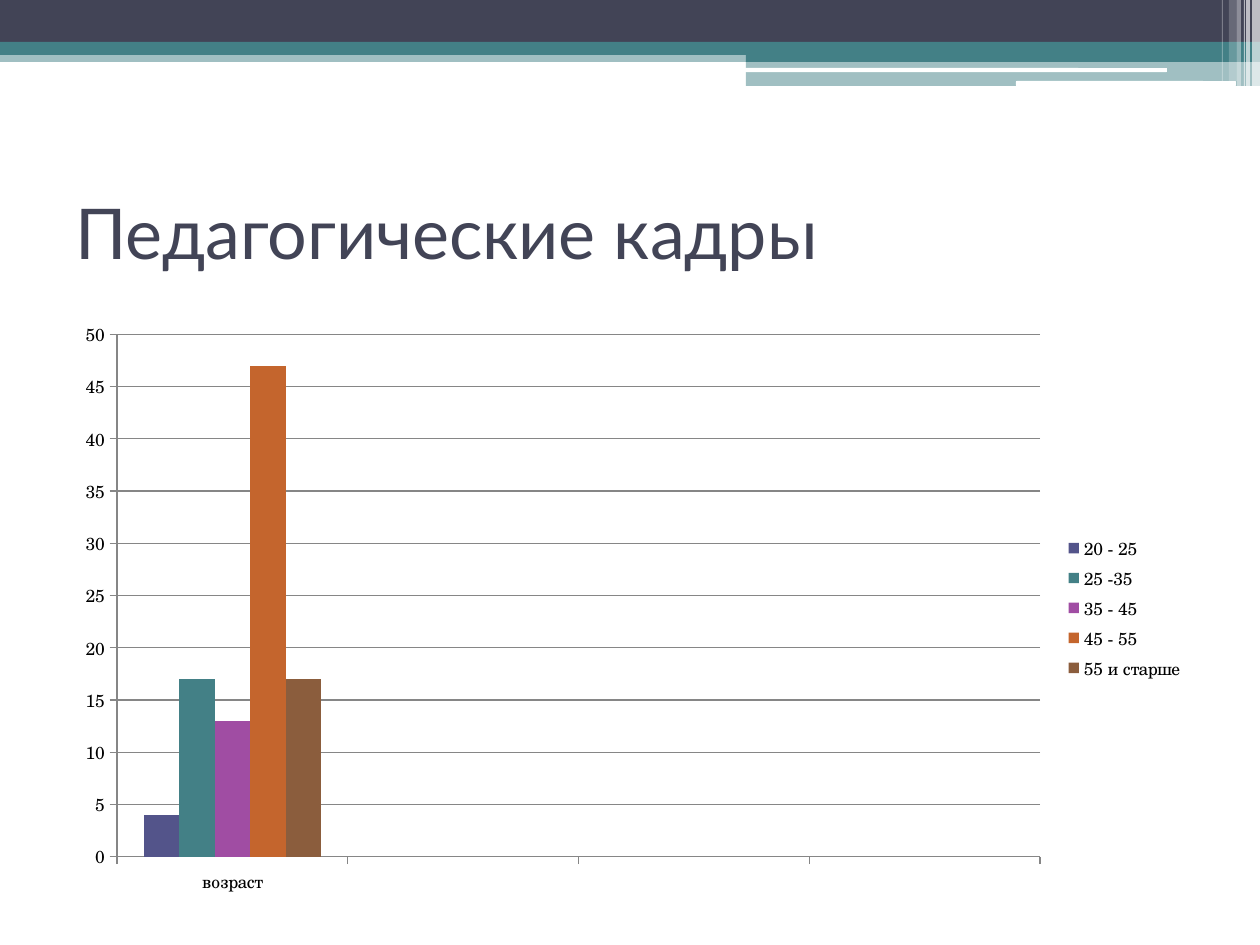
from lxml.etree import SubElement
from pptx import Presentation
from pptx.chart.data import CategoryChartData
from pptx.dml.color import RGBColor
from pptx.enum.chart import XL_CHART_TYPE, XL_LEGEND_POSITION, XL_TICK_MARK
from pptx.enum.shapes import MSO_SHAPE
from pptx.enum.text import MSO_ANCHOR, PP_ALIGN
from pptx.oxml.ns import qn
from pptx.util import Emu, Pt

EMU_PER_PX = 914400 / 126
COLORS = {
    "dark": "424456", "teal": "438086", "white": "FFFFFF", "black": "000000",
    "axis": "868686", "indigo": "53548A", "purple": "A04DA3",
    "orange": "C4652D", "brown": "8B5D3D",
}
AGE_GROUPS = [
    ("20 - 25", 4, "indigo"),
    ("25 -35", 17, "teal"),
    ("35 - 45", 13, "purple"),
    ("45 - 55", 47, "orange"),
    ("55 и старше", 17, "brown"),
]
CATEGORIES = ["возраст", "", "", ""]


def px(length):
    return Emu(round(length * EMU_PER_PX))


def rgb(name):
    return RGBColor.from_string(COLORS[name])


def set_attributes(target, values):
    for name, value in values.items():
        setattr(target, name, value)


def add_bar(slide, box, color, opacity=100, preset=MSO_SHAPE.RECTANGLE):
    shape = slide.shapes.add_shape(preset, *map(px, box))
    shape.shadow.inherit = False
    shape.line.fill.background()
    shape.fill.solid()
    shape.fill.fore_color.rgb = rgb(color)
    if opacity < 100:
        color_element = shape.fill._xPr.find(qn("a:solidFill"))[0]
        SubElement(color_element, qn("a:alpha"), val=str(opacity * 1000))


def add_header(slide, box):
    left, top, width, height = box
    step = 746  # where the deeper right-hand part of the header begins
    bands = [
        (0, 50, width, 12, "teal", 50),
        (0, 0, width, 42, "dark", 100),
        (0, 42, width, 13, "teal", 100),
        (step, 49, width - step, 13, "teal", 100),
        (step, 61, width - step, height - 61, "teal", 50),
    ]
    for x, y, band_width, band_height, color, opacity in bands:
        add_bar(slide, (left + x, top + y, band_width, band_height), color, opacity)

    for x, y, line_width, line_height in [(745, 68, 422, 4), (1016, 81, 220, 5)]:
        add_bar(slide, (left + x, top + y, line_width, line_height), "white",
                preset=MSO_SHAPE.ROUNDED_RECTANGLE)

    stripes = [
        (1252, 8, height, 65), (1246, 4, height, 65), (1244, 1, height, 60),
        (1237, 4, height, 40), (1229, 8, 81, 20), (1222, 1, 81, 30),
    ]
    for x, stripe_width, stripe_height, opacity in stripes:
        add_bar(slide, (left + x, top, stripe_width, stripe_height), "white", opacity)


def add_title(slide, box, text):
    frame = slide.shapes.add_textbox(*map(px, box)).text_frame
    set_attributes(frame, {"word_wrap": True, "vertical_anchor": MSO_ANCHOR.MIDDLE})
    paragraph = frame.paragraphs[0]
    paragraph.alignment = PP_ALIGN.LEFT
    run = paragraph.add_run()
    run.text = text
    set_attributes(run.font, {"name": "Lato", "size": Pt(40)})
    run.font.color.rgb = rgb("dark")


def format_axis_line(line):
    line.color.rgb = rgb("axis")
    line.width = Pt(0.75)


def add_age_chart(slide, box):
    data = CategoryChartData()
    data.categories = CATEGORIES
    for name, value, _ in AGE_GROUPS:
        data.add_series(name, [value] + [None] * (len(CATEGORIES) - 1))
    chart = slide.shapes.add_chart(
        XL_CHART_TYPE.COLUMN_CLUSTERED, *map(px, box), data).chart
    set_attributes(chart, {"has_title": False, "has_legend": True})
    set_attributes(chart.font, {"name": "TeX Gyre Schola", "size": Pt(10)})
    chart.font.color.rgb = rgb("black")
    set_attributes(chart.legend, {
        "position": XL_LEGEND_POSITION.RIGHT, "include_in_layout": False})

    for axis in (chart.category_axis, chart.value_axis):
        set_attributes(axis, {
            "major_tick_mark": XL_TICK_MARK.OUTSIDE,
            "minor_tick_mark": XL_TICK_MARK.NONE})
        format_axis_line(axis.format.line)
    set_attributes(chart.value_axis, {
        "minimum_scale": 0, "maximum_scale": 50, "major_unit": 5,
        "has_major_gridlines": True})
    format_axis_line(chart.value_axis.major_gridlines.format.line)

    plot = chart.plots[0]
    set_attributes(plot, {"gap_width": 150, "overlap": 0, "vary_by_categories": False})
    for series, (_, _, color) in zip(plot.series, AGE_GROUPS):
        series.format.fill.solid()
        series.format.fill.fore_color.rgb = rgb(color)


def main():
    presentation = Presentation()
    set_attributes(presentation, {"slide_width": px(1260), "slide_height": px(945)})
    slide = presentation.slides.add_slide(presentation.slide_layouts[6])
    slide.background.fill.solid()
    slide.background.fill.fore_color.rgb = rgb("white")
    add_header(slide, (0, 0, 1260, 86))
    add_title(slide, (63, 158, 1134, 147), "Педагогические кадры")
    add_age_chart(slide, (63, 310, 1134, 596))
    presentation.save("out.pptx")


if __name__ == "__main__":
    main()
